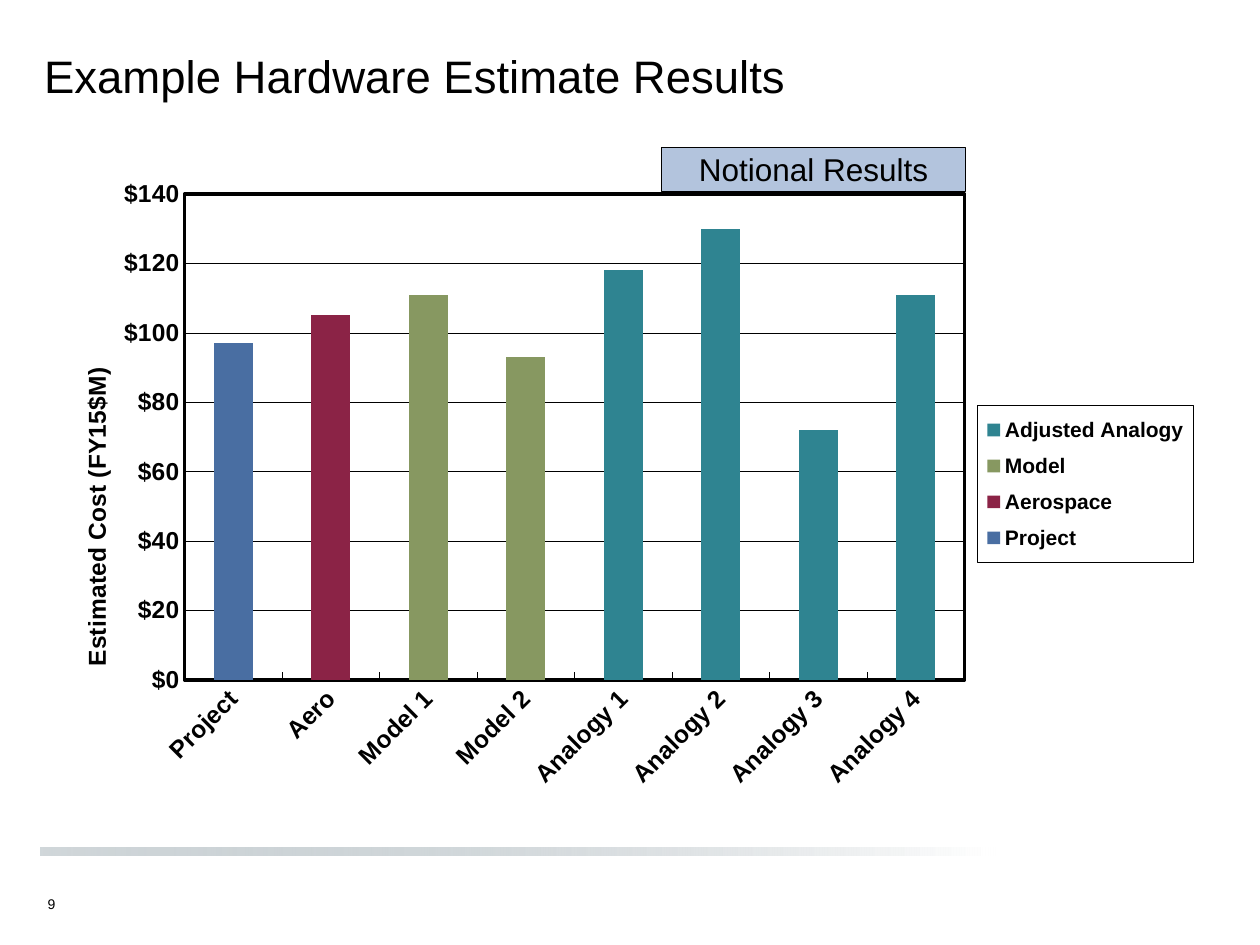
from dataclasses import dataclass

from lxml import etree
from pptx import Presentation
from pptx.chart.data import CategoryChartData
from pptx.dml.color import RGBColor
from pptx.enum.chart import XL_CHART_TYPE, XL_LEGEND_POSITION, XL_TICK_MARK
from pptx.enum.shapes import MSO_SHAPE
from pptx.enum.text import MSO_ANCHOR, PP_ALIGN
from pptx.oxml import parse_xml
from pptx.oxml.ns import nsdecls, qn
from pptx.util import Cm, Pt


@dataclass(frozen=True)
class Theme:
    font: str = "Arial"
    ink: str = "000000"
    paper: str = "FFFFFF"
    rule: str = "82939B"
    callout: str = "B3C4DD"
    title_pt: int = 26
    callout_pt: int = 18
    axis_pt: int = 14
    legend_pt: int = 12
    number_pt: int = 8
    hairline: float = 0.25
    border: float = 0.75
    frame: float = 2
    series: tuple = ("496EA2", "8B2346", "879861", "2F8491")


CATEGORIES = ["Project", "Aero", "Model 1", "Model 2",
              "Analogy 1", "Analogy 2", "Analogy 3", "Analogy 4"]
# name, index of its first category, costs
SERIES = [
    ("Project", 0, [97]),
    ("Aerospace", 1, [105]),
    ("Model", 2, [111, 93]),
    ("Adjusted Analogy", 4, [118, 130, 72, 111]),
]


def rgb(value):
    return RGBColor.from_string(value)


def place_after(sibling, inner=False, **fractions):
    """Give a chart part a manual layout, in fractions of the chart."""
    parent = sibling.getparent()
    for old in parent.findall(qn("c:layout")):
        parent.remove(old)
    target = '<c:layoutTarget val="inner"/>' if inner else ""
    modes = "".join(f'<c:{k}Mode val="edge"/>' for k in "xy")
    sizes = "".join(f'<c:{k} val="{v}"/>' for k, v in fractions.items())
    sibling.addnext(parse_xml(
        f'<c:layout {nsdecls("c")}><c:manualLayout>{target}{modes}{sizes}'
        "</c:manualLayout></c:layout>"))


def outline(color, points):
    """Shape properties of a chart part: no fill, one solid line."""
    return parse_xml(
        f'<c:spPr {nsdecls("c", "a")}><a:noFill/><a:ln w="{Pt(points)}">'
        f'<a:solidFill><a:srgbClr val="{color}"/></a:solidFill></a:ln></c:spPr>')


class Deck:
    def __init__(self, theme):
        self.theme = theme
        self.prs = Presentation()
        self.prs.slide_width, self.prs.slide_height = Cm(25.4), Cm(19.05)
        self.s = None

    def add_slide(self):
        self.s = self.prs.slides.add_slide(self.prs.slide_layouts[6])

    def style(self, font, size, bold=False):
        font.name, font.size, font.bold = self.theme.font, Pt(size), bold
        font.color.rgb = rgb(self.theme.ink)

    def line(self, line, points):
        line.color.rgb = rgb(self.theme.ink)
        line.width = Pt(points)

    def set_text(self, tf, text, size, wrap=True):
        tf.text = text
        tf.word_wrap = wrap
        self.style(tf.paragraphs[0].runs[0].font, size)

    def text(self, x, y, w, h, text, size, wrap=True):
        sp = self.s.shapes.add_textbox(Cm(x), Cm(y), Cm(w), Cm(h))
        self.set_text(sp.text_frame, text, size, wrap)

    def rect(self, x, y, w, h):
        sp = self.s.shapes.add_shape(MSO_SHAPE.RECTANGLE, Cm(x), Cm(y), Cm(w), Cm(h))
        sp.shadow.inherit = False
        return sp

    def fading_rule(self, x, y, w, h, opacity):
        sp = self.rect(x, y, w, h)
        sp.line.fill.background()
        sp.fill.gradient()
        sp.fill.gradient_angle = 0
        for stop, color in zip(sp.fill.gradient_stops, (self.theme.rule, self.theme.paper)):
            stop.color.rgb = rgb(color)
        first = next(sp._element.iter(qn("a:srgbClr")))
        etree.SubElement(first, qn("a:alpha")).set("val", str(opacity * 1000))

    def callout(self, x, y, w, h, text):
        sp = self.rect(x, y, w, h)
        sp.fill.solid()
        sp.fill.fore_color.rgb = rgb(self.theme.callout)
        self.line(sp.line, self.theme.border)
        tf = sp.text_frame
        self.set_text(tf, text, self.theme.callout_pt)
        tf.vertical_anchor = MSO_ANCHOR.MIDDLE
        tf.paragraphs[0].alignment = PP_ALIGN.CENTER

    def cost_chart(self, x, y, w, h):
        data = CategoryChartData()
        data.categories = CATEGORIES
        for name, start, costs in SERIES:
            after = len(CATEGORIES) - start - len(costs)
            data.add_series(name, [None] * start + costs + [None] * after)
        chart = self.s.shapes.add_chart(
            XL_CHART_TYPE.COLUMN_STACKED, Cm(x), Cm(y), Cm(w), Cm(h), data).chart
        chart.has_title = False
        self.style(chart.font, self.theme.axis_pt, True)

        plot = chart.plots[0]
        plot.gap_width, plot.overlap, plot.vary_by_categories = 150, 100, False
        for series, color in zip(plot.series, self.theme.series):
            series.format.fill.solid()
            series.format.fill.fore_color.rgb = rgb(color)
        area = plot._element.getparent()
        place_after(plot._element, True, x=0.113, y=0.055, w=0.671, h=0.734)
        area.insert(0, area.find(qn("c:layout")))
        area.append(outline(self.theme.ink, self.theme.frame))

        self.axes(chart)
        self.legend(chart)

    def axes(self, chart):
        cat, val = chart.category_axis, chart.value_axis
        for axis, tick in ((cat, XL_TICK_MARK.INSIDE), (val, XL_TICK_MARK.NONE)):
            axis.major_tick_mark, axis.minor_tick_mark = tick, XL_TICK_MARK.NONE
            self.style(axis.tick_labels.font, self.theme.axis_pt, True)
            self.line(axis.format.line, self.theme.hairline)
        cat._element.find(qn("c:txPr")).find(qn("a:bodyPr")).set("rot", str(-45 * 60000))

        val.minimum_scale, val.maximum_scale, val.major_unit = 0, 140, 20
        val.has_major_gridlines = True
        self.line(val.major_gridlines.format.line, self.theme.hairline)
        val.tick_labels.number_format = r"\$#,##0"
        val.tick_labels.number_format_is_linked = False

        title = val.axis_title
        tf = title.text_frame
        tf.text = "Estimated Cost (FY15$M)"
        self.style(tf.paragraphs[0].runs[0].font, self.theme.axis_pt, True)
        tf._txBody.find(qn("a:bodyPr")).set("rot", str(-90 * 60000))
        place_after(title._element.find(qn("c:tx")), x=0.02, y=0.31)

    def legend(self, chart):
        chart.has_legend = True
        legend = chart.legend
        legend.position = XL_LEGEND_POSITION.RIGHT
        legend.include_in_layout = False
        self.style(legend.font, self.theme.legend_pt, True)
        el = legend._element
        place_after(el.find(qn("c:legendPos")), x=0.795, y=0.374, w=0.186, h=0.238)
        el.find(qn("c:txPr")).addprevious(outline(self.theme.ink, self.theme.border))


def main():
    theme = Theme()
    deck = Deck(theme)
    deck.add_slide()
    deck.fading_rule(0.81, 17.09, 19.25, 0.16, opacity=37)
    deck.text(0.71, 17.93, 0.86, 0.61, "9", theme.number_pt, wrap=False)
    deck.text(0.64, 0.84, 22.86, 1.73, "Example Hardware Estimate Results", theme.title_pt)
    deck.cost_chart(1.07, 3.18, 23.44, 13.34)
    deck.callout(13.34, 2.97, 6.12, 0.89, "Notional Results")
    deck.prs.save("out.pptx")


if __name__ == "__main__":
    main()
